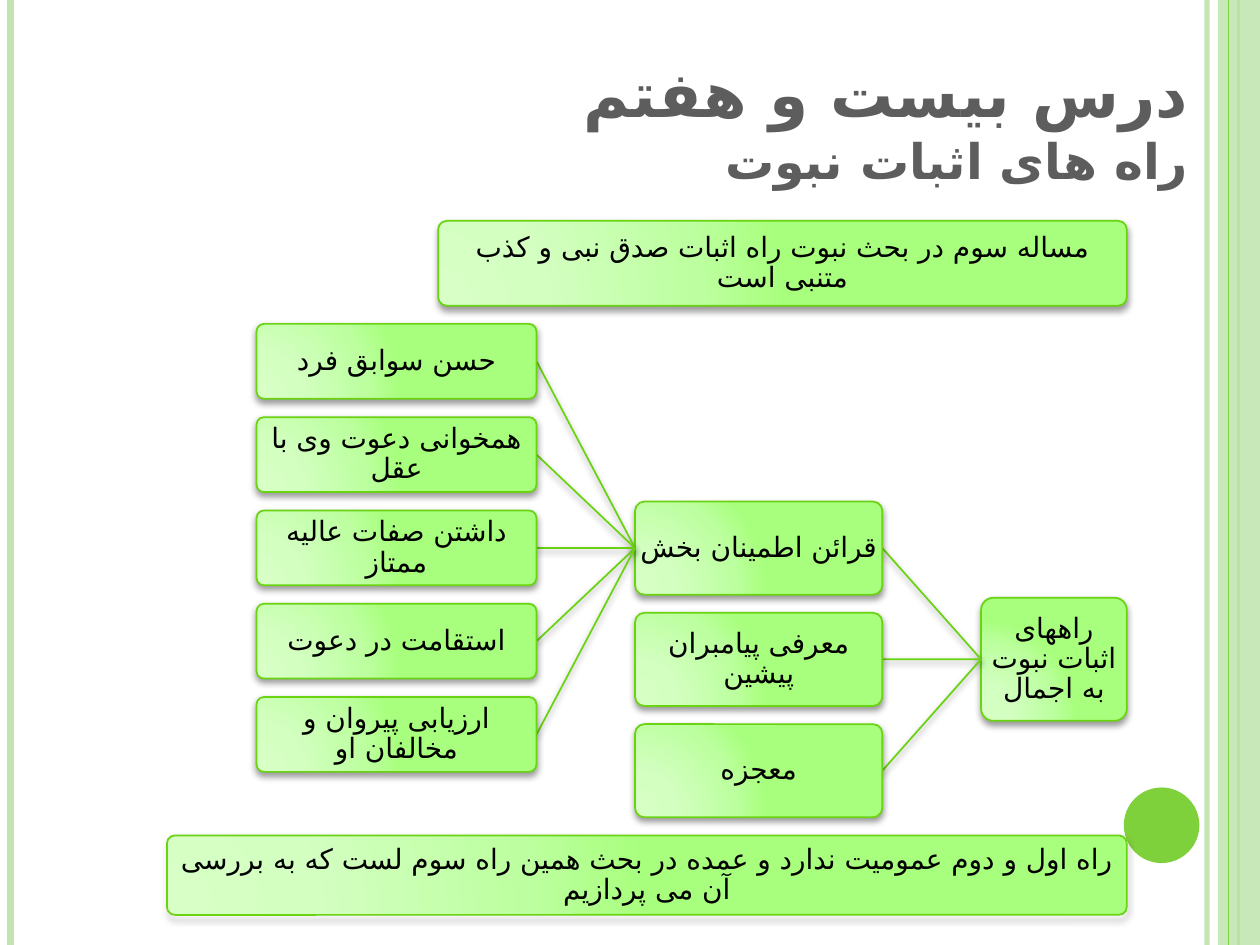
"""Build a slide on the ways of proving prophethood, as a right-to-left tree."""
from dataclasses import dataclass
from typing import Optional

from lxml.etree import SubElement
from pptx import Presentation
from pptx.dml.color import RGBColor
from pptx.enum.shapes import MSO_CONNECTOR, MSO_SHAPE
from pptx.enum.text import MSO_ANCHOR, PP_ALIGN
from pptx.oxml import parse_xml
from pptx.oxml.ns import nsdecls, qn
from pptx.util import Pt

WIDTH, HEIGHT = 720, 540
GREEN = RGBColor(0x7F, 0xD1, 0x3B)
PALE = RGBColor(0xC0, 0xE5, 0xAF)
SOFT = RGBColor(0xB8, 0xE2, 0xA0)
EDGE = RGBColor(0x6A, 0xD3, 0x12)
GREY = RGBColor(0x5D, 0x5D, 0x5D)
BLACK = RGBColor(0, 0, 0)
STOPS = (
    (0, RGBColor(0xD7, 0xFF, 0xC6)),
    (30, RGBColor(0xD3, 0xFF, 0xC1)),
    (75, RGBColor(0xBD, 0xFF, 0xA0)),
    (100, RGBColor(0xA8, 0xFF, 0x7D)),
)
FONT = "Cambria"
ARABIC_FONT = "DejaVu Sans"
BOX_TEXT = {"name": FONT, "size": Pt(16), "bold": False}
TITLE_TEXT = {"name": FONT, "size": Pt(36), "bold": True}
SUBTITLE_TEXT = {**TITLE_TEXT, "size": Pt(28)}
BOX_FRAME = {
    "word_wrap": True, "vertical_anchor": MSO_ANCHOR.MIDDLE,
    "margin_left": Pt(0.7), "margin_right": Pt(0.7),
    "margin_top": Pt(0.7), "margin_bottom": Pt(0.7),
}
TITLE_FRAME = {"word_wrap": True, "vertical_anchor": MSO_ANCHOR.BOTTOM}


@dataclass(frozen=True)
class Box:
    text: str
    x: float
    y: float
    w: float
    h: float

    @property
    def mid(self) -> float:
        return self.y + self.h / 2


@dataclass(frozen=True)
class Stripe:
    x: float
    width: float
    color: RGBColor
    alpha: Optional[int] = None


STRIPES = (
    Stripe(689.8, 3, PALE, 93), Stripe(6, 4.5, PALE),
    Stripe(707.8, 1.5, SOFT), Stripe(702, 0.75, GREEN),
)
HEADER = Box("مساله سوم در بحث نبوت راه اثبات صدق نبی و کذب متنبی است", 250.4, 126.2, 393.5, 48.5)
ROOT = Box("راههای اثبات نبوت به اجمال", 560.6, 341.6, 83.3, 70.3)
FOOTER = Box("راه اول و دوم عمومیت ندارد و عمده در بحث همین راه سوم لست که به بررسی آن می پردازیم",
             95.4, 477.4, 548.5, 45.4)
BRANCH_TEXTS = ("قرائن اطمینان بخش", "معرفی پیامبران پیشین", "معجزه")
LEAF_TEXTS = (
    "حسن سوابق فرد", "همخوانی دعوت وی با عقل", "داشتن صفات عالیه ممتاز",
    "استقامت در دعوت", "ارزیابی پیروان و مخالفان او",
)


def apply(obj: object, values: dict) -> None:
    for name, value in values.items():
        setattr(obj, name, value)


def stack(texts: tuple, x: float, y: float, w: float, h: float, pitch: float) -> list[Box]:
    return [Box(text, x, y + i * pitch, w, h) for i, text in enumerate(texts)]


def set_alpha(fill, percent: int) -> None:
    color = fill._xPr.find(qn("a:solidFill"))[0]
    SubElement(color, qn("a:alpha")).set("val", str(percent * 1000))


def add_shadow(s) -> None:
    s._element.spPr.append(parse_xml(
        f'<a:effectLst {nsdecls("a")}><a:outerShdw blurRad="{Pt(4)}" dist="{Pt(2)}" '
        'dir="5400000" rotWithShape="0"><a:srgbClr val="000000"><a:alpha val="40000"/>'
        '</a:srgbClr></a:outerShdw></a:effectLst>'))


def set_glow_fill(s) -> None:
    stops = "".join(f'<a:gs pos="{pos * 1000}"><a:srgbClr val="{color}"/></a:gs>'
                    for pos, color in STOPS)
    s.fill.background()
    spPr = s._element.spPr
    spPr.replace(spPr.find(qn("a:noFill")), parse_xml(
        f'<a:gradFill {nsdecls("a")} rotWithShape="1"><a:gsLst>{stops}</a:gsLst>'
        '<a:path path="circle"><a:fillToRect l="5000" t="100000" r="120000" b="10000"/>'
        '</a:path></a:gradFill>'))


def add_run(p, text: str, values: dict, color: RGBColor) -> None:
    r = p.add_run()
    r.text = text
    apply(r.font, values)
    r.font.color.rgb = color
    SubElement(r.font._element, qn("a:cs")).set("typeface", ARABIC_FONT)


def start_rtl(tf, align: PP_ALIGN):
    p = tf.paragraphs[0]
    p.alignment = align
    p._p.get_or_add_pPr().set("rtl", "1")
    return p


def add_line(sp, x1: float, y1: float, x2: float, y2: float, color: RGBColor, width: float):
    s = sp.add_connector(MSO_CONNECTOR.STRAIGHT, Pt(x1), Pt(y1), Pt(x2), Pt(y2))
    s.line.color.rgb = color
    s.line.width = Pt(width)
    return s


def add_stripe(sp, stripe: Stripe) -> None:
    s = add_line(sp, stripe.x, 0, stripe.x, HEIGHT, stripe.color, stripe.width)
    if stripe.alpha:
        set_alpha(s.line.fill, stripe.alpha)
    SubElement(s._element.spPr, qn("a:effectLst"))


def add_plain(sp, kind: MSO_SHAPE, x: float, y: float, w: float, h: float, color: RGBColor):
    s = sp.add_shape(kind, Pt(x), Pt(y), Pt(w), Pt(h))
    s.shadow.inherit = False
    s.fill.solid()
    s.fill.fore_color.rgb = color
    s.line.fill.background()
    return s


def add_link(sp, parent: Box, child: Box) -> None:
    add_shadow(add_line(sp, parent.x, parent.mid, child.x + child.w, child.mid, EDGE, 1))


def add_box(sp, box: Box) -> None:
    s = sp.add_shape(MSO_SHAPE.ROUNDED_RECTANGLE, Pt(box.x), Pt(box.y), Pt(box.w), Pt(box.h))
    s.adjustments[0] = 0.1
    set_glow_fill(s)
    s.line.color.rgb = EDGE
    s.line.width = Pt(1)
    add_shadow(s)
    apply(s.text_frame, BOX_FRAME)
    p = start_rtl(s.text_frame, PP_ALIGN.CENTER)
    p.line_spacing = 0.9
    add_run(p, box.text, BOX_TEXT, BLACK)


def add_title(sp) -> None:
    tf = sp.add_textbox(Pt(98), Pt(21.6), Pt(588), Pt(90)).text_frame
    apply(tf, TITLE_FRAME)
    p = start_rtl(tf, PP_ALIGN.RIGHT)
    add_run(p, "درس بیست و هفتم", TITLE_TEXT, GREY)
    p.add_line_break()
    add_run(p, "راه های اثبات نبوت", SUBTITLE_TEXT, GREY)


def add_children(sp, parent: Box, children: list[Box]) -> None:
    for child in children:
        add_link(sp, parent, child)
        add_box(sp, child)


def main() -> None:
    prs = Presentation()
    prs.slide_width, prs.slide_height = Pt(WIDTH), Pt(HEIGHT)
    sp = prs.slides.add_slide(prs.slide_layouts[6]).shapes
    band = add_plain(sp, MSO_SHAPE.RECTANGLE, 696, 0, 24, HEIGHT, PALE)
    set_alpha(band.fill, 87)
    for stripe in STRIPES:
        add_stripe(sp, stripe)
    add_plain(sp, MSO_SHAPE.OVAL, 642.2, 450, 43.2, 43.2, GREEN)
    add_title(sp)
    branches = stack(BRANCH_TEXTS, 362.9, 286.6, 141.3, 53.2, 63.6)
    leaves = stack(LEAF_TEXTS, 146.6, 185.1, 160, 42.8, 53.3)
    add_box(sp, HEADER)
    add_box(sp, ROOT)
    add_children(sp, ROOT, branches)
    add_children(sp, branches[0], leaves)
    add_box(sp, FOOTER)
    prs.save("out.pptx")


if __name__ == "__main__":
    main()
